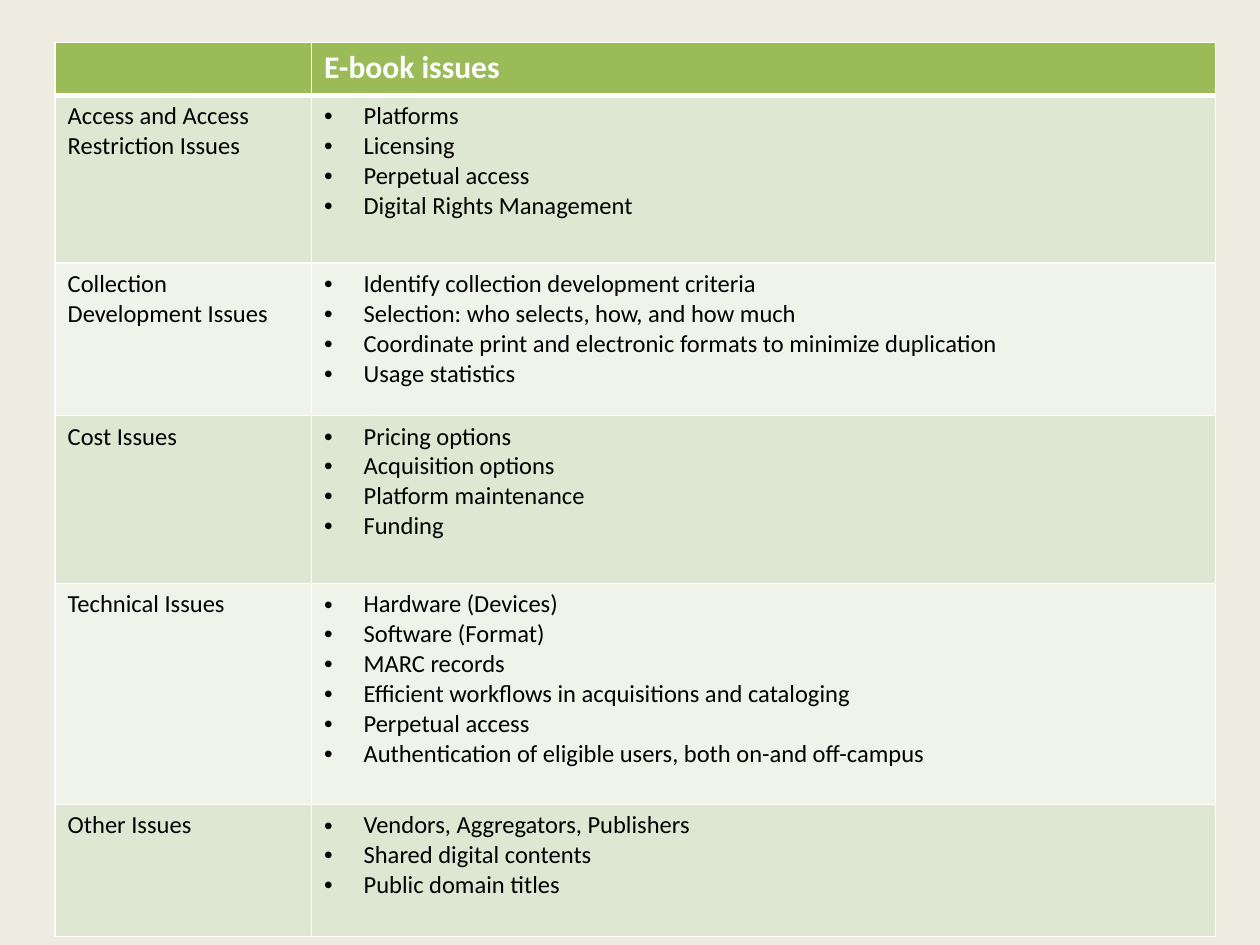
from lxml import etree
from pptx import Presentation
from pptx.dml.color import RGBColor
from pptx.oxml.ns import qn
from pptx.util import Pt

FONT = "Calibri"
WHITE, GREEN = "FFFFFF", "9BBB59"
BANDS = ("DEE7D1", "EFF3EA")
HEADER = {"name": FONT, "size": Pt(18), "bold": True}
BODY = {"name": FONT, "size": Pt(14), "bold": False}
COLUMN_WIDTHS = (146.6, 516.5)
HEADER_HEIGHT = 30.2
INDENT = 22.5
ISSUES = [
    ("Access and Access Restriction Issues", 96,
     ["Platforms", "Licensing", "Perpetual access", "Digital Rights Management"]),
    ("Collection Development Issues", 87,
     ["Identify collection development criteria",
      "Selection: who selects, how, and how much",
      "Coordinate print and electronic formats to minimize duplication",
      "Usage statistics"]),
    ("Cost Issues", 96,
     ["Pricing options", "Acquisition options", "Platform maintenance", "Funding"]),
    ("Technical Issues", 126.3,
     ["Hardware (Devices)", "Software (Format)", "MARC records",
      "Efficient workflows in acquisitions and cataloging", "Perpetual access",
      "Authentication of eligible users, both on-and off-campus"]),
    ("Other Issues", 75.4,
     ["Vendors, Aggregators, Publishers", "Shared digital contents",
      "Public domain titles"]),
]


def paint(fill, color):
    """Give a fill one solid colour."""
    fill.solid()
    fill.fore_color.rgb = RGBColor.from_string(color)


def set_borders(cell, top=1, bottom=1):
    """Draw white lines on the four sides of a cell."""
    tc_pr = cell._tc.get_or_add_tcPr()
    widths = {"a:lnL": 1, "a:lnR": 1, "a:lnT": top, "a:lnB": bottom}
    for i, (tag, width) in enumerate(widths.items()):
        ln = etree.Element(qn(tag), w=str(Pt(width)))
        solid = etree.SubElement(ln, qn("a:solidFill"))
        etree.SubElement(solid, qn("a:srgbClr"), val=WHITE)
        tc_pr.insert(i, ln)


def add_bullet(p):
    """Give a paragraph a bullet with a hanging indent."""
    p_pr = p._p.get_or_add_pPr()
    p_pr.set("marL", str(Pt(INDENT)))
    p_pr.set("indent", str(-Pt(INDENT)))
    etree.SubElement(p_pr, qn("a:buFont"), typeface="Arial")
    etree.SubElement(p_pr, qn("a:buChar"), char="•")


def write_cell(cell, lines, style, color, bulleted=False):
    """Write one formatted paragraph per line in a cell."""
    tf = cell.text_frame
    for i, line in enumerate(lines):
        p = tf.add_paragraph() if i else tf.paragraphs[0]
        r = p.add_run()
        r.text = line
        for name, value in style.items():
            setattr(r.font, name, value)
        r.font.color.rgb = RGBColor.from_string(color)
        if bulleted:
            add_bullet(p)


def format_row(table, index, height, color, **borders):
    """Set the height, fill and borders of a row."""
    table.rows[index].height = Pt(height)
    for cell in table.rows[index].cells:
        paint(cell.fill, color)
        set_borders(cell, **borders)


def add_issue_table(slide):
    """Add the table of issues by category."""
    height = HEADER_HEIGHT + sum(row[1] for row in ISSUES)
    table = slide.shapes.add_table(
        len(ISSUES) + 1, len(COLUMN_WIDTHS), Pt(31.5), Pt(24.2),
        Pt(sum(COLUMN_WIDTHS)), Pt(height)).table
    for column, width in zip(table.columns, COLUMN_WIDTHS):
        column.width = Pt(width)
    format_row(table, 0, HEADER_HEIGHT, GREEN, bottom=3)
    write_cell(table.cell(0, 1), ["E-book issues"], HEADER, WHITE)
    for i, (category, row_height, items) in enumerate(ISSUES, 1):
        format_row(table, i, row_height, BANDS[(i - 1) % 2], top=3 if i == 1 else 1)
        write_cell(table.cell(i, 0), [category], BODY, "000000")
        write_cell(table.cell(i, 1), items, BODY, "000000", bulleted=True)


def main():
    """Build and save the slide."""
    prs = Presentation()
    prs.slide_width, prs.slide_height = Pt(720), Pt(540)
    slide = prs.slides.add_slide(prs.slide_layouts[6])
    paint(slide.background.fill, "EEECE1")
    add_issue_table(slide)
    prs.save("out.pptx")


if __name__ == "__main__":
    main()
